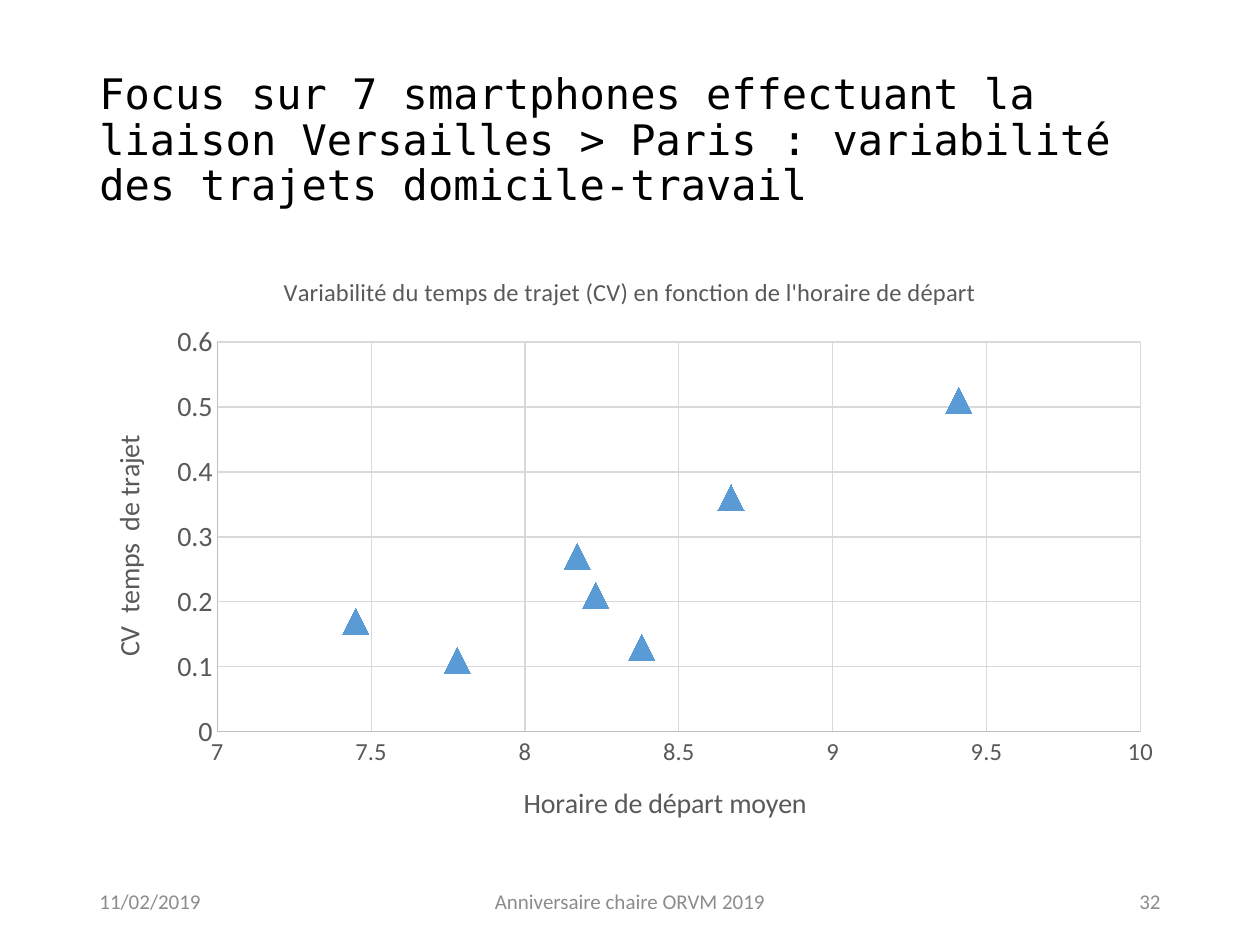
from dataclasses import dataclass

from lxml.etree import SubElement
from pptx import Presentation
from pptx.chart.data import XyChartData
from pptx.dml.color import RGBColor
from pptx.enum.chart import XL_CHART_TYPE, XL_MARKER_STYLE, XL_TICK_MARK
from pptx.enum.text import MSO_ANCHOR, PP_ALIGN
from pptx.oxml.ns import qn
from pptx.util import Pt


@dataclass(frozen=True)
class Theme:
    background: str = "FFFFFF"
    title: str = "000000"
    footer: str = "8C8C8C"
    label: str = "595959"
    axis: str = "BFBFBF"
    grid: str = "D9D9D9"
    marker: str = "5B9BD5"
    title_font: str = "DejaVu Sans Mono"
    body_font: str = "Calibri"
    title_size: int = 24
    footer_size: int = 12
    chart_title_size: int = 14
    axis_title_size: int = 16
    x_label_size: int = 14
    y_label_size: int = 16
    marker_size: int = 15
    line_width: float = 0.75


class Deck:
    """Holds the theme and the current slide, and draws each kind of element."""

    def __init__(self, theme, width, height):
        self.theme = theme
        self.prs = Presentation()
        self.prs.slide_width = self.emu(width)
        self.prs.slide_height = self.emu(height)

    def emu(self, px):
        return round(px * 914400 / 126)

    def add_slide(self):
        self.slide = self.prs.slides.add_slide(self.prs.slide_layouts[6])
        fill = self.slide.background.fill
        fill.solid()
        fill.fore_color.rgb = RGBColor.from_string(self.theme.background)

    def style_font(self, font, size, color, name):
        font.size = Pt(size)
        font.name = name
        font.bold = False
        font.color.rgb = RGBColor.from_string(color)

    def style_line(self, line, color):
        line.width = Pt(self.theme.line_width)
        line.color.rgb = RGBColor.from_string(color)

    def text(self, text, box, size, color, name, align=PP_ALIGN.LEFT, spacing=1.0):
        sp = self.slide.shapes.add_textbox(*map(self.emu, box))
        tf = sp.text_frame
        tf.word_wrap = True
        tf.vertical_anchor = MSO_ANCHOR.MIDDLE
        p = tf.paragraphs[0]
        p.text = text
        p.alignment = align
        p.line_spacing = spacing
        self.style_font(p.font, size, color, name)

    def chart_text(self, tf, text, size):
        tf.text = text
        t = self.theme
        self.style_font(tf.paragraphs[0].font, size, t.label, t.body_font)

    def axis(self, axis, title, label_size, low, high, step):
        t = self.theme
        axis.minimum_scale, axis.maximum_scale = low, high
        axis.major_unit = step
        axis.major_tick_mark = axis.minor_tick_mark = XL_TICK_MARK.NONE
        axis.has_major_gridlines = True
        self.style_line(axis.major_gridlines.format.line, t.grid)
        self.style_line(axis.format.line, t.axis)
        self.style_font(axis.tick_labels.font, label_size, t.label, t.body_font)
        axis.tick_labels.number_format = "General"
        axis.tick_labels.number_format_is_linked = False
        self.chart_text(axis.axis_title.text_frame, title, t.axis_title_size)

    def plot_layout(self, chart, **fractions):
        area = chart.plots[0]._element.getparent()
        for old in area.findall(qn("c:layout")):
            area.remove(old)
        layout = SubElement(area, qn("c:layout"))
        area.insert(0, layout)
        manual = SubElement(layout, qn("c:manualLayout"))
        settings = {"layoutTarget": "inner", "xMode": "edge", "yMode": "edge", **fractions}
        for tag, value in settings.items():
            SubElement(manual, qn(f"c:{tag}")).set("val", str(value))

    def scatter(self, box, title, points):
        t = self.theme
        data = XyChartData()
        series = data.add_series("CV")
        for x, y in points:
            series.add_data_point(x, y)
        frame = self.slide.shapes.add_chart(
            XL_CHART_TYPE.XY_SCATTER, *map(self.emu, box), data
        )
        chart = frame.chart
        chart.has_legend = False
        chart.font.name = t.body_font
        chart.has_title = True
        self.chart_text(chart.chart_title.text_frame, title, t.chart_title_size)
        plot = chart.plots[0]
        plot.vary_by_categories = False
        series = plot.series[0]
        series.smooth = False
        series.format.line.fill.background()
        marker = series.marker
        marker.style = XL_MARKER_STYLE.TRIANGLE
        marker.size = t.marker_size
        marker.format.fill.solid()
        marker.format.fill.fore_color.rgb = RGBColor.from_string(t.marker)
        marker.format.line.fill.background()
        self.plot_layout(chart, x=0.12, y=0.15, w=0.85, h=0.65)
        return chart


def main():
    theme = Theme()
    deck = Deck(theme, 1260, 945)
    deck.add_slide()
    deck.text(
        "Focus sur 7 smartphones effectuant la liaison Versailles > Paris : "
        "variabilité des trajets domicile-travail",
        (87, 50, 1086, 183),
        theme.title_size, theme.title, theme.title_font, spacing=0.9,
    )
    footers = [
        ("11/02/2019", 87, 283, PP_ALIGN.LEFT),
        ("Anniversaire chaire ORVM 2019", 417, 426, PP_ALIGN.CENTER),
        ("32", 890, 283, PP_ALIGN.RIGHT),
    ]
    for text, left, width, align in footers:
        deck.text(
            text, (left, 876, width, 50),
            theme.footer_size, theme.footer, theme.body_font, align,
        )
    chart = deck.scatter(
        (87, 252, 1086, 600),
        "Variabilité du temps de trajet (CV) en fonction de l'horaire de départ",
        [(7.78, 0.11), (8.23, 0.21), (7.45, 0.17), (8.38, 0.13),
         (8.67, 0.36), (9.41, 0.51), (8.17, 0.27)],
    )
    deck.axis(chart.category_axis, "Horaire de départ moyen",
              theme.x_label_size, 7, 10, 0.5)
    deck.axis(chart.value_axis, "CV  temps  de trajet",
              theme.y_label_size, 0, 0.6, 0.1)
    deck.prs.save("out.pptx")


if __name__ == "__main__":
    main()
